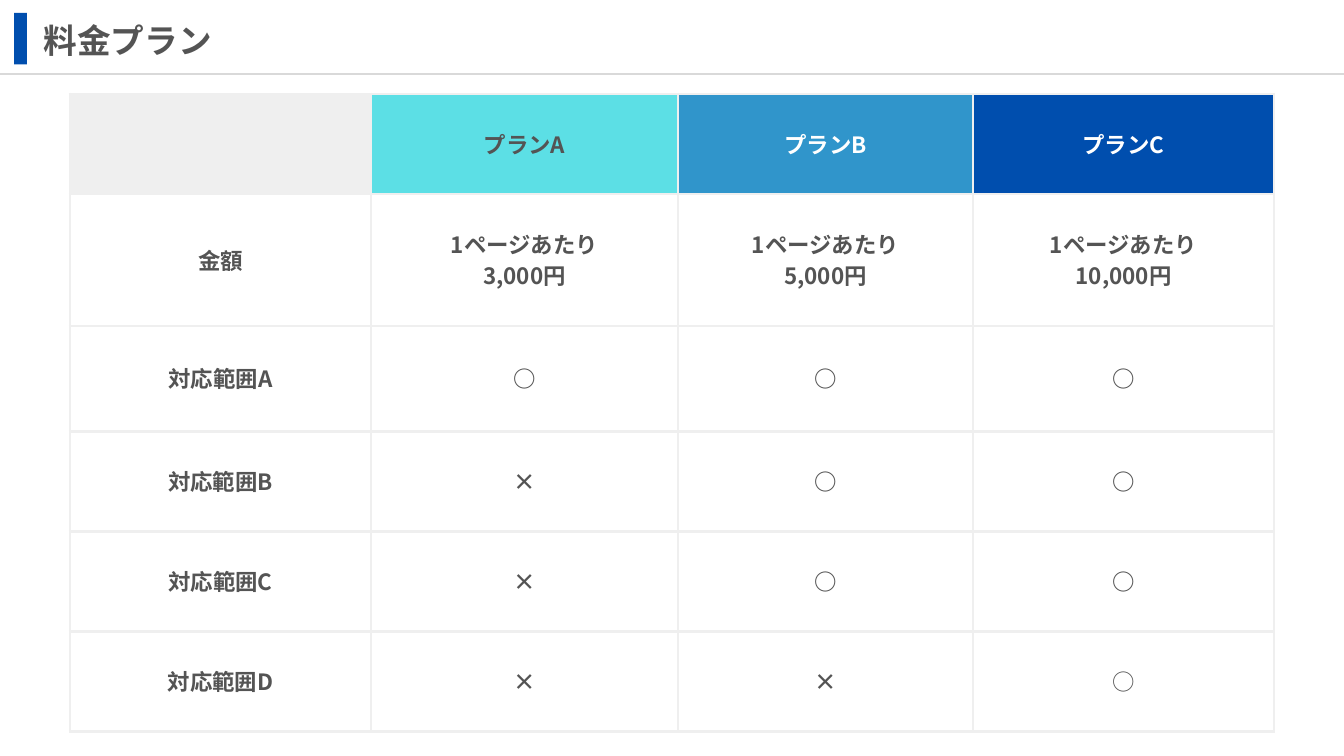
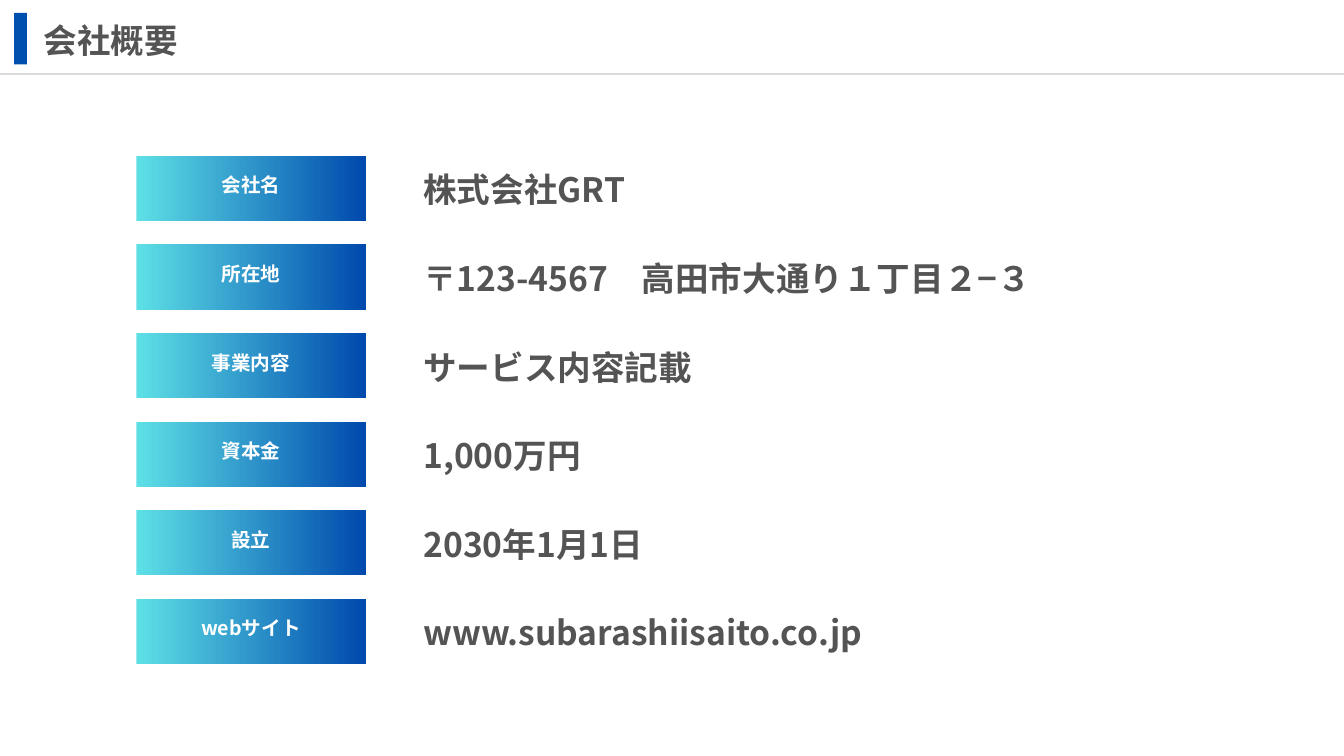
import dataclasses

import lxml.etree
import pptx
import pptx.dml.color
import pptx.enum.shapes
import pptx.enum.text
import pptx.oxml.ns
import pptx.util

Inches, Pt = pptx.util.Inches, pptx.util.Pt
RECT = pptx.enum.shapes.MSO_SHAPE.RECTANGLE
ALIGN = pptx.enum.text.PP_ALIGN
ANCHOR = pptx.enum.text.MSO_ANCHOR
GROW = pptx.enum.text.MSO_AUTO_SIZE.SHAPE_TO_FIT_TEXT
qn = pptx.oxml.ns.qn


@dataclasses.dataclass(frozen=True)
class Theme:
    font: str = "Noto Sans CJK JP"
    ink: str = "545454"
    white: str = "FFFFFF"
    blue: str = "004EAE"
    rule: str = "D9D9D9"
    grid: str = "EFEFEF"
    plans: tuple = ("5CDFE5", "3095CB", "004EAE")
    fade: tuple = ("5DE0E6", "004AAD")
    big: int = 36
    mid: int = 24
    small: int = 21
    lead: float = 1.4
    line: int = 3


THEME = Theme()
SIDES = ("left", "right", "top", "bottom")

PLANS = (
    ("", "プランA", "プランB", "プランC"),
    ("金額", "1ページあたり\n3,000円", "1ページあたり\n5,000円", "1ページあたり\n10,000円"),
    ("対応範囲A", "○", "○", "○"),
    ("対応範囲B", "×", "○", "○"),
    ("対応範囲C", "×", "○", "○"),
    ("対応範囲D", "×", "×", "○"),
)
WIDTHS = (4.48, 4.57, 4.39, 4.48)
HEIGHTS = (1.49, 1.96, 1.57, 1.49, 1.49, 1.49)

FACTS = (
    ("会社名", "株式会社GRT"),
    ("所在地", "〒123-4567\u3000高田市大通り１丁目２−３".replace("\u3000", "　")),
    ("事業内容", "サービス内容記載"),
    ("資本金", "1,000万円"),
    ("設立", "2030年1月1日"),
    ("webサイト", "www.subarashiisaito.co.jp"),
)


def rgb(code):
    return pptx.dml.color.RGBColor.from_string(code)


def span(*sizes):
    return [Inches(size) for size in sizes]


def put(item, values):
    for name, value in values.items():
        setattr(item, name, value)


def pad(item, size, **other):
    """Set equal margins, except for the sides named in other."""
    put(item, {f"margin_{side}": Inches(other.get(side, size)) for side in SIDES})


def write(frame, text, size, color, align=ALIGN.LEFT, bold=True):
    """Fill a frame with one paragraph per line of text."""
    frame.text = text
    for para in frame.paragraphs:
        put(para, {"alignment": align, "line_spacing": Pt(size * THEME.lead)})
        for run in para.runs:
            put(run.font, {"size": Pt(size), "bold": bold, "name": THEME.font})
            run.font.color.rgb = rgb(color)
            east = lxml.etree.SubElement(run.font._element, qn("a:ea"))
            east.set("typeface", THEME.font)


def big_text(shape, text):
    frame = shape.text_frame
    pad(frame, 0)
    put(frame, {"word_wrap": True, "vertical_anchor": ANCHOR.TOP, "auto_size": GROW})
    write(frame, text, THEME.big, THEME.ink)


def block(slide, left, top, width, height):
    """Add a rectangle without line or shadow."""
    shape = slide.shapes.add_shape(RECT, *span(left, top, width, height))
    shape.shadow.inherit = False
    shape.line.fill.background()
    return shape


def header(slide, text, width):
    bar = block(slide, 0.21, 0.19, 0.19, 0.77)
    bar.fill.solid()
    bar.fill.fore_color.rgb = rgb(THEME.blue)
    kind = pptx.enum.shapes.MSO_CONNECTOR.STRAIGHT
    rule = slide.shapes.add_connector(kind, *span(0, 1.1, width, 1.1))
    rule.line.width = Pt(THEME.line)
    rule.line.color.rgb = rgb(THEME.rule)
    lxml.etree.SubElement(rule._element.spPr, qn("a:effectLst"))
    title = slide.shapes.title
    put(title, dict(zip(("left", "top", "width", "height"), span(0.65, 0.19, 18.23, 0.68))))
    big_text(title, text)


def edge(cell):
    """Draw the grid line on all four sides of a cell."""
    props = cell._tc.get_or_add_tcPr()
    for spot, side in enumerate("LRTB"):
        line = lxml.etree.Element(qn(f"a:ln{side}"), w=str(Pt(THEME.line)))
        fill = lxml.etree.SubElement(line, qn("a:solidFill"))
        lxml.etree.SubElement(fill, qn("a:srgbClr"), val=THEME.grid)
        props.insert(spot, line)


def price_grid(slide, left, top):
    box = span(left, top, sum(WIDTHS), sum(HEIGHTS))
    table = slide.shapes.add_table(len(PLANS), len(WIDTHS), *box).table
    put(table, {"first_row": False, "horz_banding": False})
    for col, width in zip(table.columns, WIDTHS):
        col.width = Inches(width)
    for row, height in zip(table.rows, HEIGHTS):
        row.height = Inches(height)
    heads = (THEME.grid, *THEME.plans)
    last = (len(PLANS) - 1, len(WIDTHS) - 1)
    for y, texts in enumerate(PLANS):
        for x, text in enumerate(texts):
            cell = table.cell(y, x)
            pad(cell, 0.21)
            cell.vertical_anchor = ANCHOR.MIDDLE
            if y == 0:
                cell.fill.solid()
                cell.fill.fore_color.rgb = rgb(heads[x])
            else:
                cell.fill.background()
            color = THEME.white if y == 0 and x > 1 else THEME.ink
            write(cell.text_frame, text, THEME.mid, color, ALIGN.CENTER, (y, x) != last)
            edge(cell)


def label(slide, text, *box):
    shape = block(slide, *box)
    shape.fill.gradient()
    shape.fill.gradient_angle = 0
    for stop, color in zip(shape.fill.gradient_stops, THEME.fade):
        stop.color.rgb = rgb(color)
    frame = shape.text_frame
    pad(frame, 0.06, bottom=0.22)
    put(frame, {"word_wrap": True, "vertical_anchor": ANCHOR.MIDDLE})
    write(frame, text, THEME.small, THEME.white, ALIGN.CENTER)


def fact_list(slide, left, top, width, height):
    """Spread the label and value rows evenly over the box."""
    wide, tall, shift = 3.41, 0.97, 4.27
    step = (height - tall) / (len(FACTS) - 1)
    for row, (name, value) in enumerate(FACTS):
        y = top + row * step
        label(slide, name, left, y, wide, tall)
        box = span(left + shift, y + 0.1, width - shift, 0.68)
        big_text(slide.shapes.add_textbox(*box), value)


def main():
    deck = pptx.Presentation()
    width = 20
    put(deck, {"slide_width": Inches(width), "slide_height": Inches(11.25)})
    pages = (
        ("料金プラン", price_grid, (1.04, 1.4)),
        ("会社概要", fact_list, (2.03, 2.32, 15.99, 7.56)),
    )
    for title, draw, box in pages:
        slide = deck.slides.add_slide(deck.slide_layouts[5])
        header(slide, title, width)
        draw(slide, *box)
    deck.save("out.pptx")


if __name__ == "__main__":
    main()
